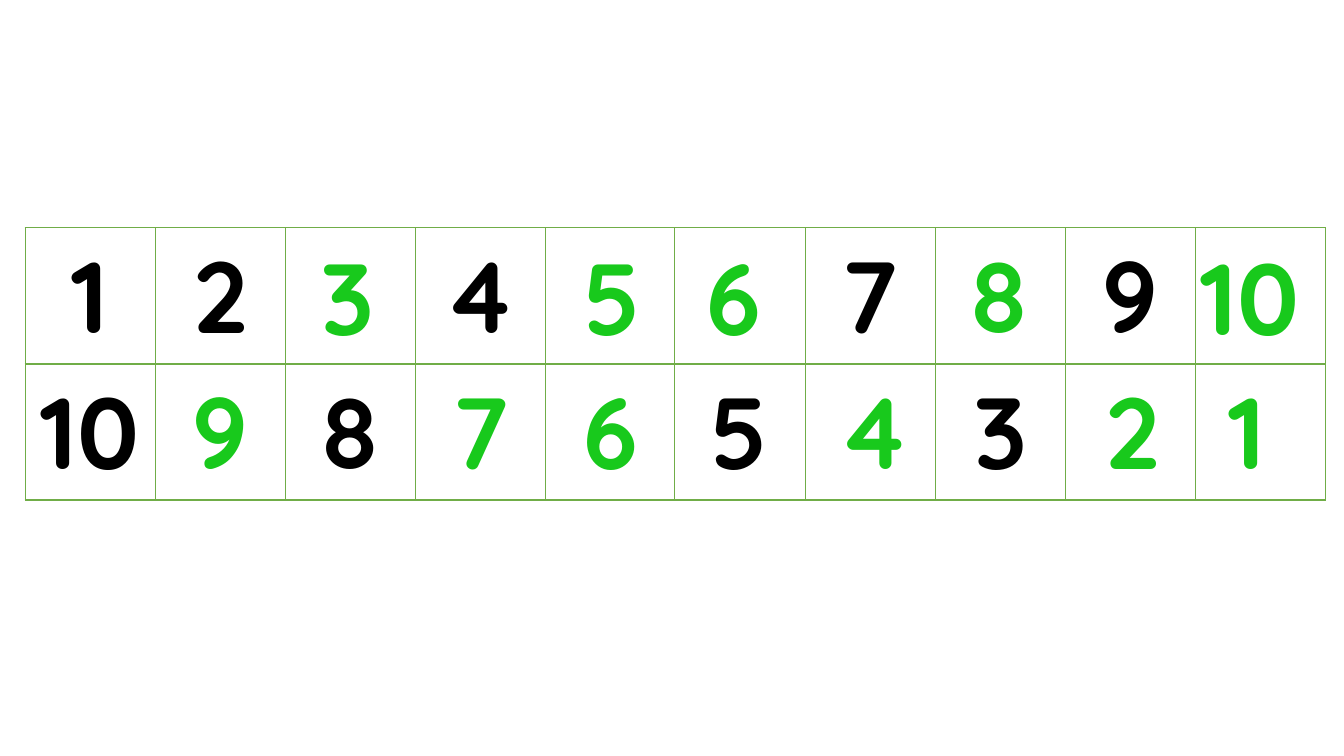
import dataclasses

import lxml.etree
import pptx
import pptx.dml.color
import pptx.enum.text
import pptx.oxml.ns
import pptx.presentation
import pptx.slide
import pptx.table
import pptx.text.text
import pptx.util

Inches = pptx.util.Inches
Align = pptx.enum.text.PP_ALIGN


@dataclasses.dataclass(frozen=True)
class Theme:
    font: str = "Quicksand"
    digit_size: int = 72
    given: str = "000000"
    answer: str = "18C91C"
    cell: str = "FFFFFF"
    border: str = "70AD47"
    border_width: int = 1


@dataclasses.dataclass(frozen=True)
class Answer:
    text: str
    left: float
    top: float
    width: float = 0.77


THEME = Theme()
ANSWER_HEIGHT = 1.31
UPPER_TOP = 2.28
LOWER_TOP = 3.61
TABLE_LEFT, TABLE_TOP = 0.25, 2.26
ROW_HEIGHT = 1.33
COLUMN_WIDTHS = [1.29] * 4 + [1.28, 1.3] + [1.29] * 4
GIVEN_NUMBERS = [
    ["1", "2", "", "4", "", "", "7", "", "9", ""],
    ["10", "", "8", "", "", "5", "", "3", "", ""],
]
ANSWERS = [
    Answer("3", 3.09, UPPER_TOP),
    Answer("5", 5.69, UPPER_TOP),
    Answer("6", 6.91, UPPER_TOP),
    Answer("8", 9.52, 2.26),
    Answer("10", 11.81, UPPER_TOP, 1.33),
    Answer("9", 1.81, LOWER_TOP),
    Answer("7", 4.39, LOWER_TOP),
    Answer("6", 5.69, LOWER_TOP),
    Answer("4", 8.22, LOWER_TOP),
    Answer("2", 10.87, LOWER_TOP),
    Answer("1", 12.09, LOWER_TOP),
]


def rgb(value: str) -> pptx.dml.color.RGBColor:
    return pptx.dml.color.RGBColor.from_string(value)


def write_text(
    frame: pptx.text.text.TextFrame,
    text: str,
    *,
    color: str,
    align: Align = Align.LEFT,
    size: int = THEME.digit_size,
    bold: bool = True,
) -> None:
    paragraph = frame.paragraphs[0]
    paragraph.alignment = align
    run = paragraph.add_run()
    run.text = text
    run.font.name = THEME.font
    run.font.size = pptx.util.Pt(size)
    run.font.bold = bold
    run.font.color.rgb = rgb(color)


def set_borders(cell: pptx.table._Cell) -> None:
    qn = pptx.oxml.ns.qn
    properties = cell._tc.get_or_add_tcPr()
    width = str(pptx.util.Pt(THEME.border_width))
    for side in ("a:lnL", "a:lnR", "a:lnT", "a:lnB"):
        line = lxml.etree.SubElement(properties, qn(side), w=width)
        fill = lxml.etree.SubElement(line, qn("a:solidFill"))
        lxml.etree.SubElement(fill, qn("a:srgbClr"), val=THEME.border)


def add_number_table(slide: pptx.slide.Slide) -> None:
    table = slide.shapes.add_table(
        len(GIVEN_NUMBERS),
        len(COLUMN_WIDTHS),
        Inches(TABLE_LEFT),
        Inches(TABLE_TOP),
        Inches(sum(COLUMN_WIDTHS)),
        Inches(ROW_HEIGHT * len(GIVEN_NUMBERS)),
    ).table
    table.first_row = False
    table.horz_banding = False
    for column, width in zip(table.columns, COLUMN_WIDTHS):
        column.width = Inches(width)
    for row, numbers in zip(table.rows, GIVEN_NUMBERS):
        row.height = Inches(ROW_HEIGHT)
        for cell, number in zip(row.cells, numbers):
            set_borders(cell)
            cell.fill.solid()
            cell.fill.fore_color.rgb = rgb(THEME.cell)
            cell.vertical_anchor = pptx.enum.text.MSO_ANCHOR.MIDDLE
            cell.margin_left = cell.margin_right = Inches(0.05)
            cell.margin_top = cell.margin_bottom = Inches(0.05)
            if number:
                write_text(cell.text_frame, number, color=THEME.given, align=Align.CENTER)


def add_answer(slide: pptx.slide.Slide, answer: Answer) -> None:
    frame = slide.shapes.add_textbox(
        Inches(answer.left),
        Inches(answer.top),
        Inches(answer.width),
        Inches(ANSWER_HEIGHT),
    ).text_frame
    frame.word_wrap = False
    frame.auto_size = pptx.enum.text.MSO_AUTO_SIZE.SHAPE_TO_FIT_TEXT
    write_text(frame, answer.text, color=THEME.answer)


def main() -> None:
    presentation = pptx.Presentation()
    presentation.slide_width = Inches(13.33)
    presentation.slide_height = Inches(7.5)
    slide = presentation.slides.add_slide(presentation.slide_layouts[6])
    add_number_table(slide)
    for answer in ANSWERS:
        add_answer(slide, answer)
    presentation.save("out.pptx")


if __name__ == "__main__":
    main()
